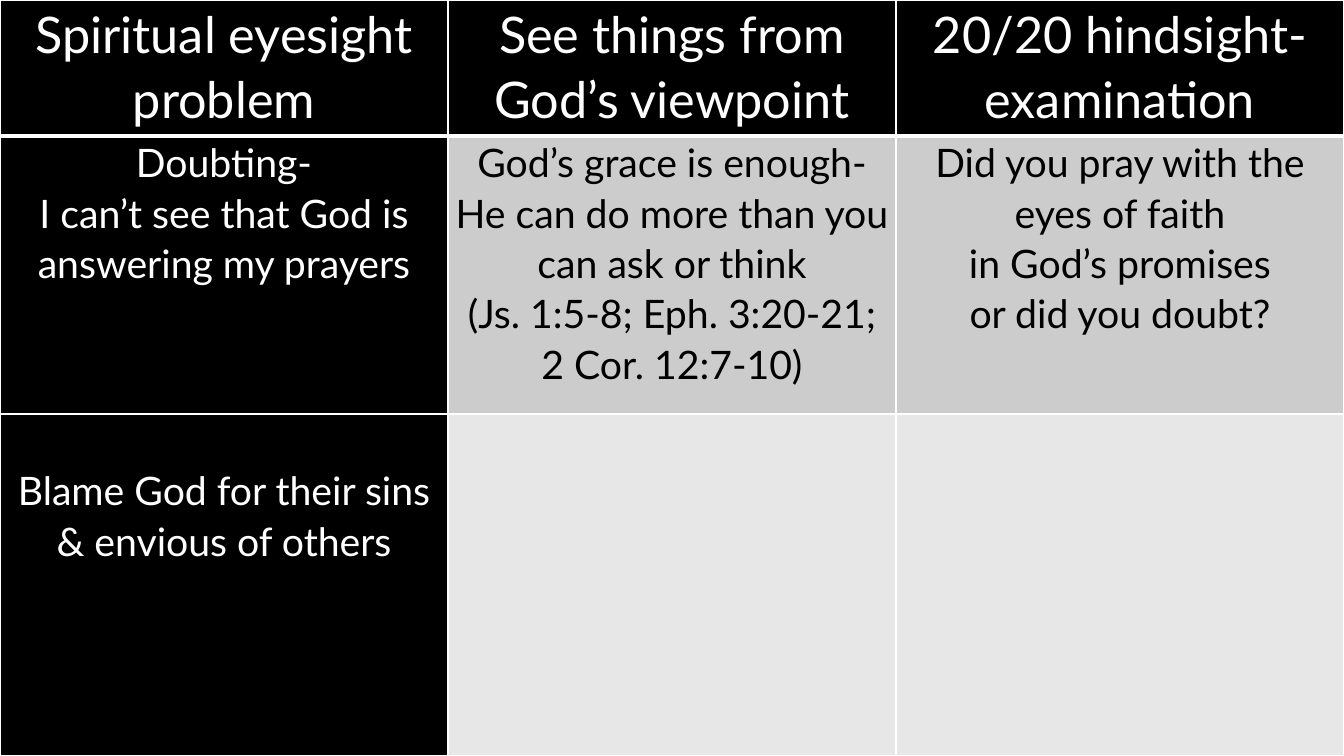
from lxml import etree
from pptx import Presentation
from pptx.dml.color import RGBColor
from pptx.enum.text import PP_ALIGN
from pptx.oxml.ns import qn
from pptx.util import Emu, Pt

CENTER = PP_ALIGN.CENTER
EMU_PER_PX = 914400 / 100.8
WIDTH, HEIGHT = 1344, 756
COLORS = {"black": "000000", "white": "FFFFFF", "gray": "CCCCCC", "light": "E7E7E7"}

ROW_HEIGHTS = [136, 278, 342]
ROW_FILLS = ["black", "gray", "light"]
ROWS = [
    [["Spiritual eyesight problem"],
     ["See things from God’s viewpoint"],
     ["20/20 hindsight- examination"]],
    [["Doubting-", "I can’t see that God is answering my prayers"],
     ["God’s grace is enough- He can do more than you can ask or think",
      "(Js. 1:5-8; Eph. 3:20-21; 2 Cor. 12:7-10)"],
     ["Did you pray with the eyes of faith", "in God’s promises", "or did you doubt?"]],
    [["Blame God for their sins & envious of others"], [], []],
]


def px(length):
    return Emu(round(length * EMU_PER_PX))


def rgb(name):
    return RGBColor.from_string(COLORS[name])


class SlideBuilder:
    font = "Lato"
    line_spacing = 1.07
    side_margin = 7

    def __init__(self, presentation):
        self.slide = presentation.slides.add_slide(presentation.slide_layouts[6])

    def background(self, color):
        fill = self.slide.background.fill
        fill.solid()
        fill.fore_color.rgb = rgb(color)

    def table(self, left, top, width, row_heights, column_count):
        height = sum(row_heights)
        frame = self.slide.shapes.add_table(
            len(row_heights), column_count, px(left), px(top), px(width), px(height))
        table = frame.table
        table.first_row = table.horz_banding = False
        for column in table.columns:
            column.width = px(width // column_count)
        for row, row_height in zip(table.rows, row_heights):
            row.height = px(row_height)
        return table

    def cell(self, cell, lines, size, fill, color, top_margin=0):
        cell.fill.solid()
        cell.fill.fore_color.rgb = rgb(fill)
        cell.margin_left = cell.margin_right = px(self.side_margin)
        cell.margin_top, cell.margin_bottom = px(top_margin), 0
        cell.text = "\n".join(lines)
        for paragraph in cell.text_frame.paragraphs:
            paragraph.alignment = CENTER
            paragraph.line_spacing = self.line_spacing
            paragraph.font.name = self.font
            paragraph.font.size = Pt(size)
            paragraph.font.color.rgb = rgb(color)

    def borders(self, cell, color, top=1, bottom=1):
        # Border elements must stand before the fill
        properties = cell._tc.get_or_add_tcPr()
        sides = {"lnL": 1, "lnR": 1, "lnT": top, "lnB": bottom}
        for index, (side, points) in enumerate(sides.items()):
            line = etree.Element(qn(f"a:{side}"), w=str(Pt(points)))
            solid = etree.SubElement(line, qn("a:solidFill"))
            etree.SubElement(solid, qn("a:srgbClr"), val=COLORS[color])
            properties.insert(index, line)


def main():
    presentation = Presentation()
    presentation.slide_width, presentation.slide_height = px(WIDTH), px(HEIGHT)
    builder = SlideBuilder(presentation)
    builder.background("black")

    # Eyesight table: black header row and first column, gray body
    table = builder.table(0, 0, WIDTH, ROW_HEIGHTS, len(ROWS[0]))
    for row, texts in enumerate(ROWS):
        for column, lines in enumerate(texts):
            cell = table.cell(row, column)
            fill = "black" if column == 0 else ROW_FILLS[row]
            builder.cell(cell, lines, size=36 if row == 0 else 28, fill=fill,
                         color="white" if fill == "black" else "black",
                         top_margin=50 if row == 2 else 0)
            builder.borders(cell, "white", top=3 if row == 1 else 1,
                            bottom=3 if row == 0 else 1)

    presentation.save("out.pptx")


if __name__ == "__main__":
    main()
